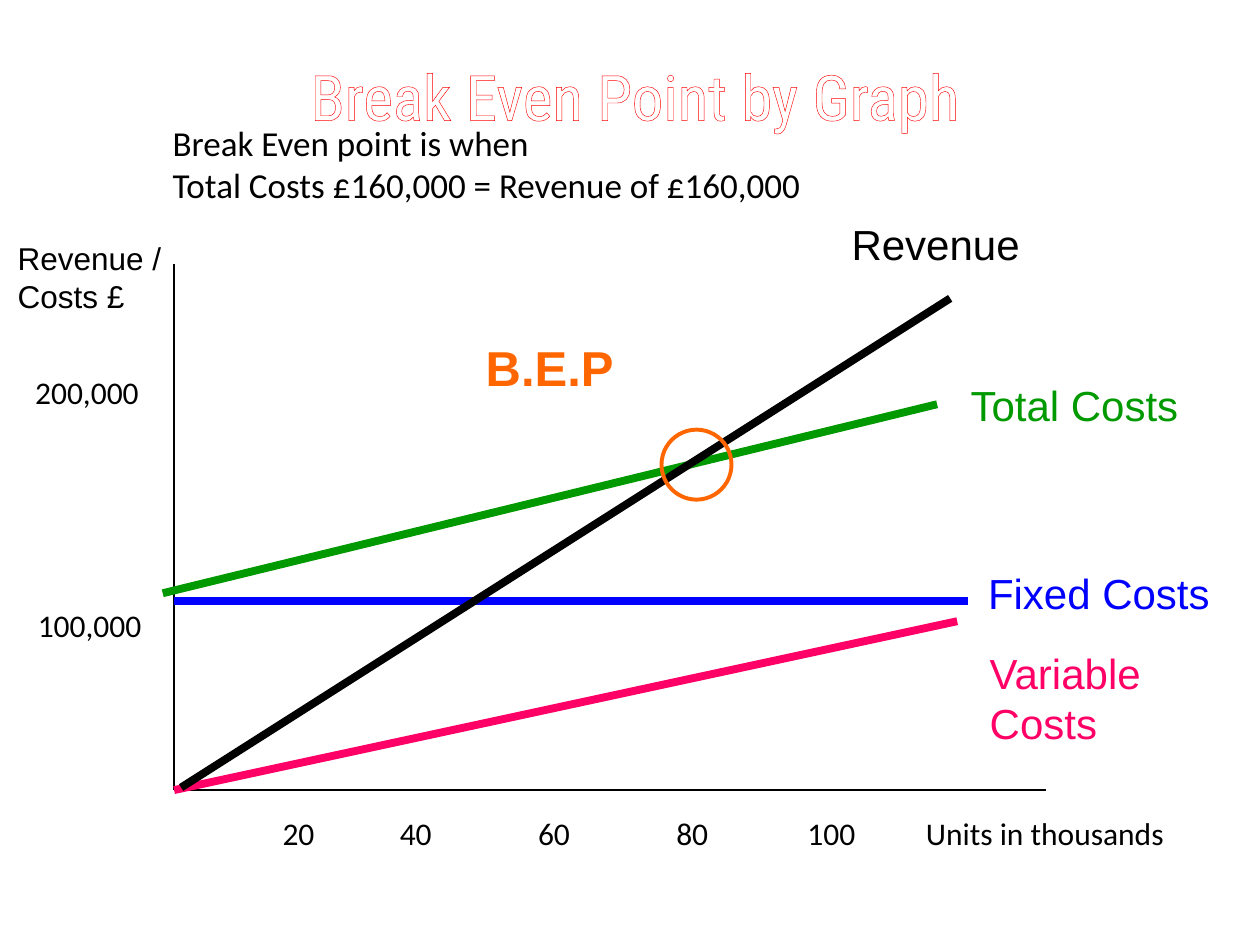
import pptx
import pptx.dml.color
import pptx.enum.shapes
import pptx.enum.text
import pptx.util
from dataclasses import dataclass
from lxml import etree

Pt = pptx.util.Pt
ALIGN = pptx.enum.text.PP_ALIGN
ANCHOR = pptx.enum.text.MSO_ANCHOR
A = "{http://schemas.openxmlformats.org/drawingml/2006/main}"


@dataclass(frozen=True)
class Theme:
    black: str = "000000"
    white: str = "FFFFFF"
    red: str = "FF0000"
    fixed: str = "0000FF"
    variable: str = "FF0066"
    total: str = "009900"
    accent: str = "FF6600"
    title_font: str = "Roboto Condensed"
    label_font: str = "Arial"
    body_font: str = "Calibri"
    title: float = 36
    callout: float = 28
    series: float = 24
    body: float = 20
    axis: float = 18
    thin: float = 0.75
    ring: float = 2.25
    thick: float = 4.5


def rgb(value):
    return pptx.dml.color.RGBColor.from_string(value)


class Builder:
    def __init__(self, s, theme):
        self.s = s
        self.t = theme

    def line(self, start, end, color, width):
        c = self.s.shapes.add_connector(
            pptx.enum.shapes.MSO_CONNECTOR.STRAIGHT, *map(Pt, start + end))
        c.line.color.rgb = rgb(color)
        c.line.width = Pt(width)
        etree.SubElement(c._element.spPr, A + "effectLst")

    def ring(self, box, color):
        sp = self.s.shapes.add_shape(
            pptx.enum.shapes.MSO_SHAPE.OVAL, *map(Pt, box))
        sp.shadow.inherit = False
        sp.fill.background()
        sp.line.color.rgb = rgb(color)
        sp.line.width = Pt(self.t.ring)

    def text(self, box, lines, font, size, color, bold=False, wrap=True,
             align=ALIGN.LEFT, anchor=ANCHOR.TOP):
        sp = self.s.shapes.add_textbox(*map(Pt, box))
        tf = sp.text_frame
        tf.word_wrap = wrap
        tf.vertical_anchor = anchor
        for i, line in enumerate(lines):
            p = tf.add_paragraph() if i else tf.paragraphs[0]
            p.alignment = align
            r = p.add_run()
            r.text = line
            r.font.name = font
            r.font.size = Pt(size)
            r.font.bold = bold
            r.font.color.rgb = rgb(color)
        return tf

    def outline(self, tf, color, width):
        """Draw a contour around the letters of every run."""
        for p in tf.paragraphs:
            for r in p.runs:
                ln = etree.Element(A + "ln", w=str(Pt(width)))
                fill = etree.SubElement(ln, A + "solidFill")
                etree.SubElement(fill, A + "srgbClr", val=color)
                r._r.get_or_add_rPr().insert(0, ln)

    def tabs(self, p, stops):
        """Set tab stops from (position, alignment) pairs."""
        tab_list = etree.SubElement(p._p.get_or_add_pPr(), A + "tabLst")
        for pos, align in stops:
            etree.SubElement(tab_list, A + "tab", pos=str(Pt(pos)), algn=align)


def main():
    prs = pptx.Presentation()
    prs.slide_width, prs.slide_height = Pt(720), Pt(540)
    t = Theme()
    b = Builder(prs.slides.add_slide(prs.slide_layouts[6]), t)

    axis_x, axis_y = 99.5, 451.5
    origin = (axis_x, axis_y)
    b.line((axis_x, 151), origin, t.black, t.thin)
    b.line(origin, (598, axis_y), t.black, t.thin)

    for start, end, color in (
            ((axis_x, 343.5), (553, 343.5), t.fixed),
            (origin, (547, 355), t.variable),
            ((93, 339), (535.5, 231), t.total),
            ((103.5, 450), (543, 170.5), t.black)):
        b.line(start, end, color, t.thick)
    b.ring((378, 245.5, 40, 40), t.accent)

    title = b.text((37, 26, 652, 57), ["Break Even Point by Graph"],
                   t.title_font, t.title, t.white, wrap=False,
                   align=ALIGN.CENTER, anchor=ANCHOR.MIDDLE)
    b.outline(title, t.red, 3)
    b.text((91.5, 66, 444, 55.5),
           ["Break Even point is when",
            "Total Costs £160,000 = Revenue of £160,000"],
           t.body_font, t.body, t.black)

    for box, lines, color in (
            ((479.5, 121.5, 111.5, 36), ["Revenue"], t.black),
            ((547.5, 213.5, 134.5, 36), ["Total Costs"], t.total),
            ((557.5, 321, 142.5, 36), ["Fixed Costs"], t.fixed),
            ((558.5, 366.5, 130.5, 65.5), ["Variable", "Costs"], t.variable)):
        b.text(box, lines, t.label_font, t.series, color, wrap=len(lines) > 1)
    b.text((270.5, 189.5, 88, 41), ["B.E.P"], t.label_font, t.callout,
           t.accent, bold=True, wrap=False)

    b.text((3, 133, 119, 51), ["Revenue / Costs £"],
           t.label_font, t.axis, t.black)
    for left, top, label in ((13, 209.5, "200,000"), (14.5, 343, "100,000")):
        b.text((left, top, 79, 29), [label], t.body_font, t.axis, t.black)

    ticks = {"20": 29.5, "40": 96.5, "60": 175.5, "80": 254.5, "100": 334}
    labels = "".join("\t" + name for name in [*ticks, "Units in thousands"])
    units = b.text((134, 461.5, 550, 29), [labels],
                   t.body_font, t.axis, t.black)
    b.tabs(units.paragraphs[0],
           [(pos, "ctr") for pos in ticks.values()] + [(388, "l")])

    prs.save("out.pptx")


if __name__ == "__main__":
    main()
